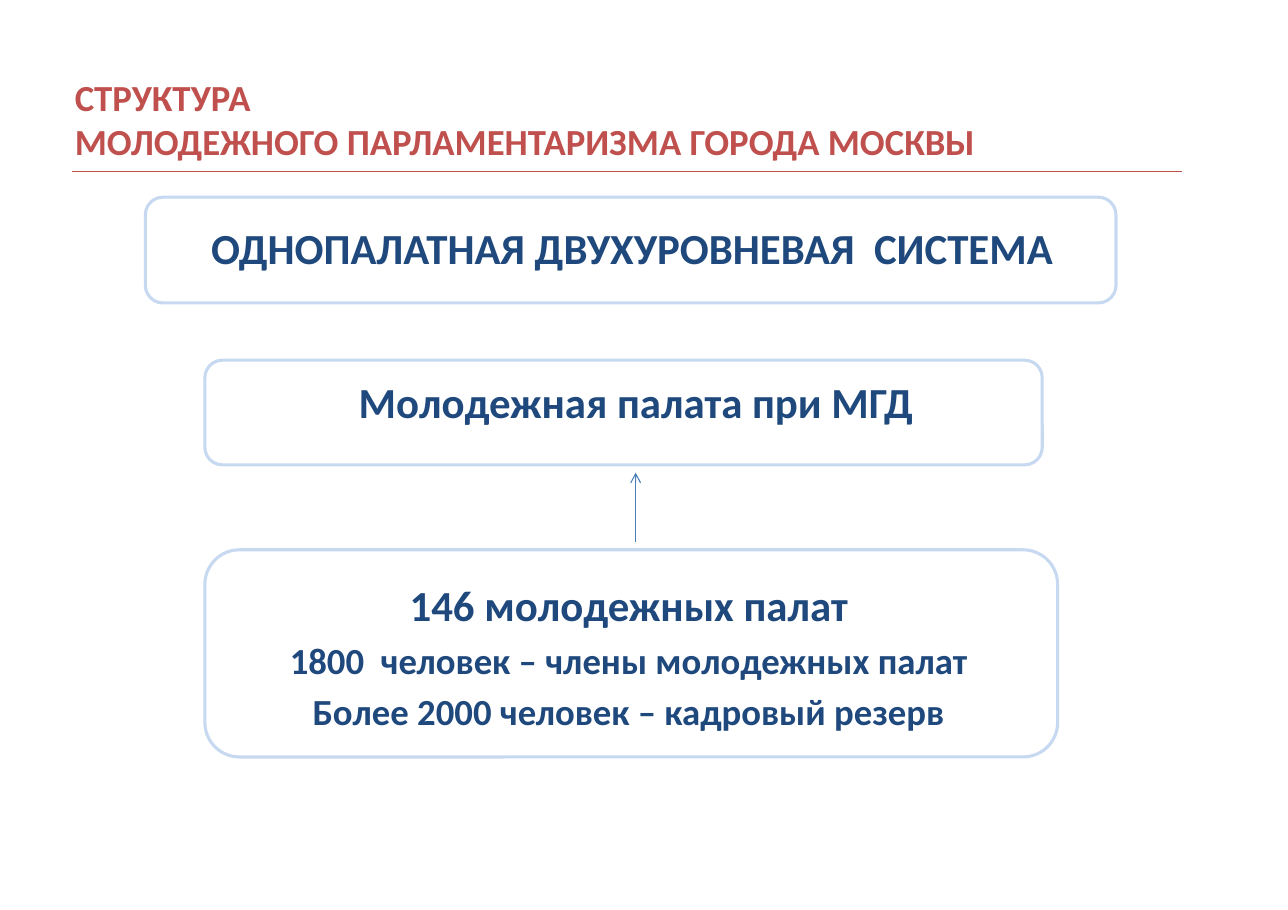
from lxml import etree
from pptx import Presentation
from pptx import util as u
from pptx.dml.color import RGBColor
from pptx.enum import shapes, text
from pptx.oxml.ns import qn

NAVY, RED, PALE, BLUE, WHITE = "1F497D", "C0504D", "C6D9F1", "4A7EBB", "FFFFFF"
LEFT, CENTER = text.PP_ALIGN.LEFT, text.PP_ALIGN.CENTER
TOP, MIDDLE = text.MSO_ANCHOR.TOP, text.MSO_ANCHOR.MIDDLE


def rgb(value):
    """Turn a hex string into a colour."""
    return RGBColor.from_string(value)


def set_all(obj, values):
    """Set each attribute of an object from a dict."""
    for name, value in values.items():
        setattr(obj, name, value)


def add_frame(s, x, y, w, h):
    """Draw a rounded frame with a pale outline."""
    sp = s.shapes.add_shape(shapes.MSO_SHAPE.ROUNDED_RECTANGLE,
                            u.Pt(x), u.Pt(y), u.Pt(w), u.Pt(h))
    sp.shadow.inherit = False
    sp.fill.solid()
    sp.fill.fore_color.rgb = rgb(WHITE)
    sp.line.color.rgb = rgb(PALE)
    sp.line.width = u.Pt(2)


def add_text(s, x, y, w, h, lines, color=NAVY, align=CENTER, anchor=TOP, gap=5):
    """Place bold lines, given as (text, size), in a text box."""
    sp = s.shapes.add_textbox(u.Pt(x), u.Pt(y), u.Pt(w), u.Pt(h))
    tf = sp.text_frame
    set_all(tf, {"word_wrap": True, "vertical_anchor": anchor,
                 "margin_left": u.Pt(7.9), "margin_right": u.Pt(7.9),
                 "margin_top": u.Pt(4.3), "margin_bottom": u.Pt(4.3)})
    for i, (line, size) in enumerate(lines):
        p = tf.add_paragraph() if i else tf.paragraphs[0]
        set_all(p, {"alignment": align, "space_before": u.Pt(gap if i else 0)})
        r = p.add_run()
        r.text = line
        set_all(r.font, {"name": "Calibri", "size": u.Pt(size), "bold": True})
        r.font.color.rgb = rgb(color)


def add_line(s, x1, y1, x2, y2, color, arrow=False):
    """Draw a thin straight line, with an open arrowhead if asked."""
    sp = s.shapes.add_connector(shapes.MSO_CONNECTOR.STRAIGHT,
                                u.Pt(x1), u.Pt(y1), u.Pt(x2), u.Pt(y2))
    sp.line.color.rgb = rgb(color)
    sp.line.width = u.Pt(0.75)
    if arrow:
        etree.SubElement(sp.line._get_or_add_ln(), qn("a:tailEnd"), type="arrow")
    etree.SubElement(sp._element.spPr, qn("a:effectLst"))


def main():
    """Build the slide and save it."""
    prs = Presentation()
    set_all(prs, {"slide_width": u.Pt(841.7), "slide_height": u.Pt(594.7)})
    s = prs.slides.add_slide(prs.slide_layouts[6])

    add_text(s, 41, 42.5, 775.4, 69.8,
             [("СТРУКТУРА", 24), ("МОЛОДЕЖНОГО ПАРЛАМЕНТАРИЗМА ГОРОДА МОСКВЫ", 24)],
             color=RED, align=LEFT, anchor=MIDDLE, gap=0)
    add_line(s, 46.8, 112.3, 772.6, 112.3, RED)

    add_frame(s, 95, 128.9, 634.3, 69.1)
    add_text(s, 95, 140.4, 635.8, 69.1, [("ОДНОПАЛАТНАЯ ДВУХУРОВНЕВАЯ  СИСТЕМА", 28)])

    add_frame(s, 133.9, 235.4, 547.2, 68.4)
    add_text(s, 143.3, 241.2, 544.3, 51.1, [("Молодежная палата при МГД", 28)])

    add_frame(s, 133.9, 359.3, 557.3, 135.4)
    add_text(s, 143.3, 373.7, 535, 112.3,
             [("146 молодежных палат", 28),
              ("1800  человек – члены молодежных палат", 24),
              ("Более 2000 человек – кадровый резерв", 24)])
    add_line(s, 415.4, 354.2, 415.4, 308.9, BLUE, arrow=True)

    prs.save("out.pptx")


if __name__ == "__main__":
    main()
